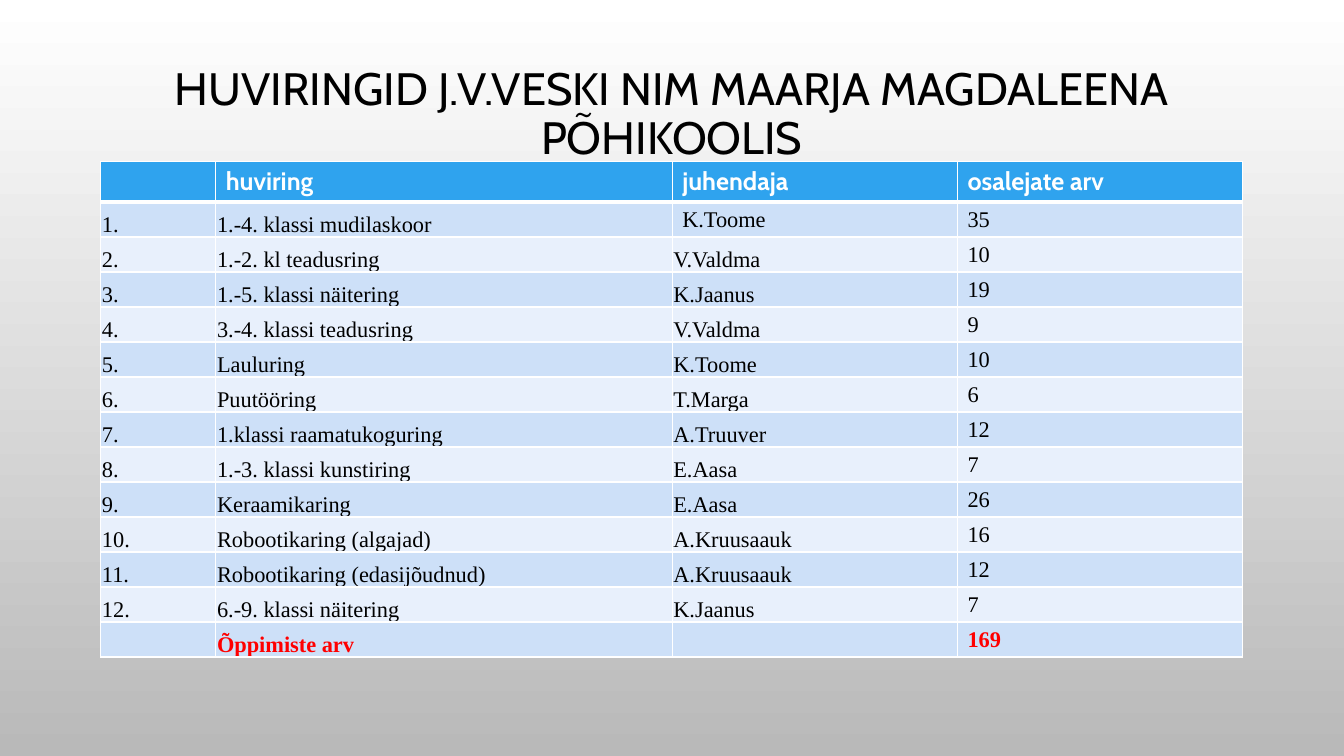
"""Builds a slide listing a school's hobby groups, their instructors and participant counts."""
import pptx
import pptx.dml.color
import pptx.enum.text
import pptx.oxml
import pptx.oxml.ns
import pptx.util
from pptx.util import Cm

BLACK = pptx.dml.color.RGBColor(0x00, 0x00, 0x00)
WHITE = pptx.dml.color.RGBColor(0xFF, 0xFF, 0xFF)
GREY = pptx.dml.color.RGBColor(0xB9, 0xB9, 0xB9)
RED = pptx.dml.color.RGBColor(0xFF, 0x00, 0x00)
HEADER_BLUE = pptx.dml.color.RGBColor(0x2F, 0xA3, 0xEE)
BAND_DARK = pptx.dml.color.RGBColor(0xCD, 0xE0, 0xF8)
BAND_LIGHT = pptx.dml.color.RGBColor(0xE8, 0xF0, 0xFC)

HEADINGS = ("", "huviring", "juhendaja", "osalejate arv")
GROUPS = [
    ("1.-4. klassi mudilaskoor", "K.Toome", 35),
    ("1.-2. kl teadusring", "V.Valdma", 10),
    ("1.-5. klassi näitering", "K.Jaanus", 19),
    ("3.-4. klassi teadusring", "V.Valdma", 9),
    ("Lauluring", "K.Toome", 10),
    ("Puutööring", "T.Marga", 6),
    ("1.klassi raamatukoguring", "A.Truuver", 12),
    ("1.-3. klassi kunstiring", "E.Aasa", 7),
    ("Keraamikaring", "E.Aasa", 26),
    ("Robootikaring (algajad)", "A.Kruusaauk", 16),
    ("Robootikaring (edasijõudnud)", "A.Kruusaauk", 12),
    ("6.-9. klassi näitering", "K.Jaanus", 7),
]
COLUMN_WIDTHS = (2.9, 11.5, 7.19, 7.19)
HEADER_HEIGHT, ROW_HEIGHT = 1.02, 0.88


def add_border(cell, side, width):
    line = pptx.oxml.parse_xml(
        f'<a:{side} {pptx.oxml.ns.nsdecls("a")} w="{pptx.util.Pt(width)}">'
        f'<a:solidFill><a:srgbClr val="{WHITE}"/></a:solidFill></a:{side}>'
    )
    cell._tc.get_or_add_tcPr().append(line)


presentation = pptx.Presentation()
presentation.slide_width = Cm(33.87)
presentation.slide_height = Cm(19.05)
slide = presentation.slides.add_slide(presentation.slide_layouts[5])

background = slide.background.fill
background.gradient()
background.gradient_angle = 270
for stop, color in zip(background.gradient_stops, (WHITE, GREY)):
    stop.color.rgb = color

title = slide.shapes.title
title.left, title.top, title.width, title.height = Cm(2.54), Cm(1.73), Cm(28.78), Cm(2.36)
title.text = "HUVIRINGID J.V.VESKI NIM MAARJA MAGDALEENA PÕHIKOOLIS"
title.text_frame.auto_size = pptx.enum.text.MSO_AUTO_SIZE.NONE
title.text_frame.vertical_anchor = pptx.enum.text.MSO_ANCHOR.MIDDLE
paragraph = title.text_frame.paragraphs[0]
paragraph.alignment = pptx.enum.text.PP_ALIGN.CENTER
paragraph.line_spacing = 0.9
paragraph.font.name = "Cabin"
paragraph.font.size = pptx.util.Pt(32.4)
paragraph.font.color.rgb = BLACK

rows = [HEADINGS]
rows += [(f"{number}.", *group) for number, group in enumerate(GROUPS, start=1)]
rows.append(("", "Õppimiste arv", "", sum(group[2] for group in GROUPS)))
last_row = len(rows) - 1

table = slide.shapes.add_table(
    len(rows), len(COLUMN_WIDTHS), Cm(2.54), Cm(4.06),
    Cm(sum(COLUMN_WIDTHS)), Cm(HEADER_HEIGHT + last_row * ROW_HEIGHT),
).table
for column, width in zip(table.columns, COLUMN_WIDTHS):
    column.width = Cm(width)

for row_index, values in enumerate(rows):
    is_header = row_index == 0
    is_total = row_index == last_row
    table.rows[row_index].height = Cm(HEADER_HEIGHT if is_header else ROW_HEIGHT)
    for column_index, value in enumerate(values):
        cell = table.cell(row_index, column_index)
        cell.text = str(value)

        is_padded = is_header or column_index == 3 or (row_index, column_index) == (1, 2)
        if not is_padded:
            cell.vertical_anchor = pptx.enum.text.MSO_ANCHOR.BOTTOM
            cell.margin_left = cell.margin_right = cell.margin_top = Cm(0.03)
            cell.margin_bottom = Cm(0)

        add_border(cell, "lnL", 1)
        add_border(cell, "lnR", 1)
        add_border(cell, "lnT", 3 if row_index == 1 else 1)
        add_border(cell, "lnB", 3 if is_header else 1)
        cell.fill.solid()
        band = BAND_DARK if row_index % 2 else BAND_LIGHT
        cell.fill.fore_color.rgb = HEADER_BLUE if is_header else band

        font = cell.text_frame.paragraphs[0].font
        font.name = "Cabin" if is_header else "Times New Roman"
        font.size = pptx.util.Pt(18 if is_header else 16)
        font.bold = is_header or is_total
        font.color.rgb = WHITE if is_header else RED if is_total else BLACK

presentation.save("out.pptx")
